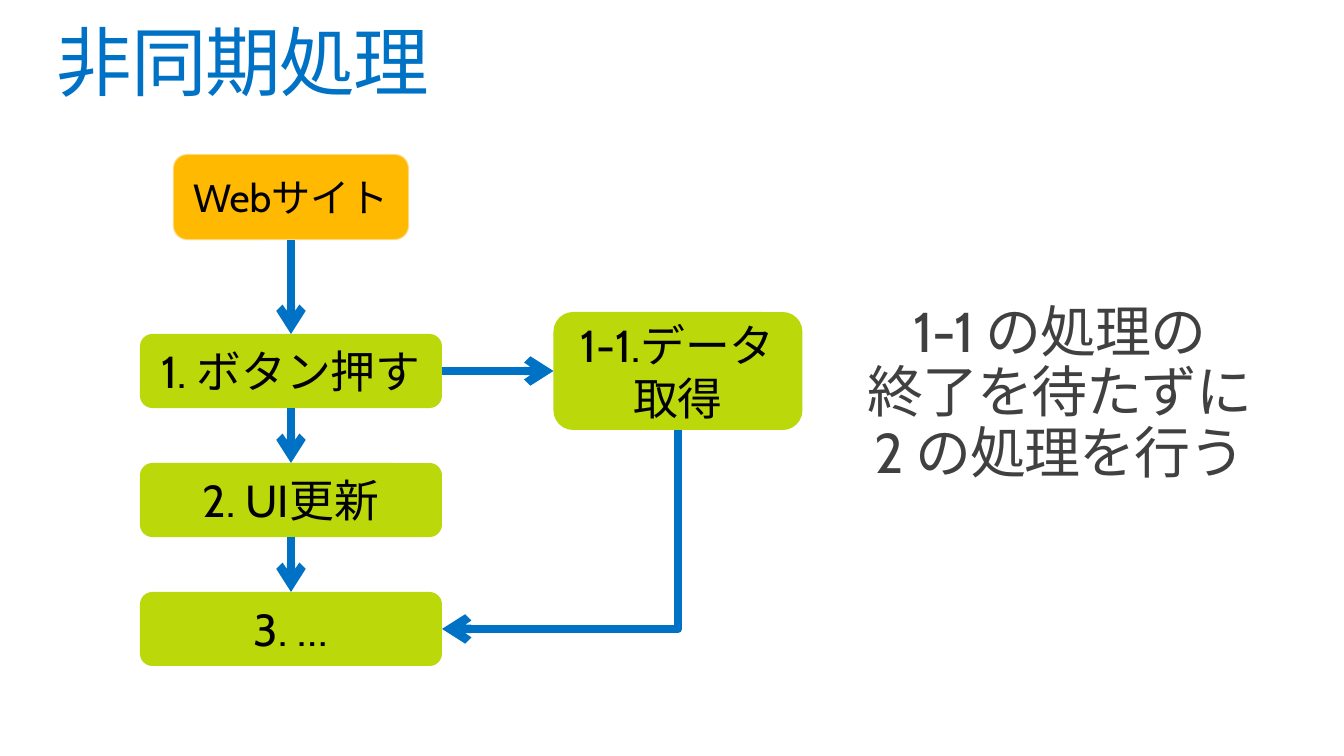
from pptx import Presentation, util as u
from pptx.dml.color import RGBColor
from pptx.enum import dml, lang, shapes, text
from pptx.oxml.ns import qn
from lxml import etree

PX = 914400 / 100.8
SLIDE = (1344, 756)
THEME = {
    "font": "Cabin",
    "blue": "0072C6", "amber": "FFB900", "green": "BAD80A",
    "edge": "F9F9F9", "black": "000000", "grey": "404040",
    "title": 54, "note": 40, "step": 32, "site": 28,
    "arrow": 6, "outline": 1.35, "inset": 5,
}

TITLE = ("非同期処理", (57, 25, 1229, 83))
NOTE = ("1-1 の処理の\v終了を待たずに\v2 の処理を行う", (815, 304, 490, 279))
SITE = "Webサイト"
STEPS = ["1. ボタン押す", "2. UI更新", "3. …"]
FETCH = "1-1.データ取得"

AXIS, STEP_TOP, STEP_PITCH = 291, 334, 129
STEP_SIZE, SITE_SIZE, FETCH_SIZE = (302, 74), (236, 86), (249, 118)
SITE_MIDDLE, FETCH_AXIS = 197, 678
TOP, LEFT, BOTTOM, RIGHT = range(4)


def emu(px):
    return u.Emu(round(px * PX))


def apply(target, values):
    for name, value in values.items():
        setattr(target, name, value)


def write(part, words, size, colour, align, anchor, inset=0, line=None, tracking=None):
    frame = part.text_frame
    apply(frame, {
        "text": words, "word_wrap": True, "auto_size": text.MSO_AUTO_SIZE.NONE,
        "vertical_anchor": anchor,
        **{f"margin_{side}": emu(inset) for side in ("left", "top", "right", "bottom")},
    })
    paragraph = frame.paragraphs[0]
    apply(paragraph, {"alignment": align, "line_spacing": line})
    for run in paragraph.runs:
        apply(run.font, {"name": THEME["font"], "size": u.Pt(THEME[size]),
                         "language_id": lang.MSO_LANGUAGE_ID.JAPANESE})
        run.font.color.rgb = RGBColor.from_string(THEME[colour])
        if tracking:
            run.font._element.set("spc", str(tracking))


def add_box(slide, words, centre, size, fill, type_size):
    (x, y), (w, h) = centre, size
    box = slide.shapes.add_shape(shapes.MSO_SHAPE.ROUNDED_RECTANGLE,
                                 *map(emu, (x - w / 2, y - h / 2, w, h)))
    box.shadow.inherit = False
    box.fill.solid()
    box.fill.fore_color.rgb = RGBColor.from_string(THEME[fill])
    box.line.fill.background()
    write(box, words, type_size, "black", text.PP_ALIGN.CENTER,
          text.MSO_ANCHOR.MIDDLE, THEME["inset"])
    return box


def add_arrow(slide, start, start_side, end, end_side):
    arrow = slide.shapes.add_connector(shapes.MSO_CONNECTOR.STRAIGHT, 0, 0, 0, 0)
    arrow.begin_connect(start, start_side)
    arrow.end_connect(end, end_side)
    arrow.line.color.rgb = RGBColor.from_string(THEME["blue"])
    arrow.line.width = u.Pt(THEME["arrow"])
    etree.SubElement(arrow.line._get_or_add_ln(), qn("a:tailEnd"), type="arrow")
    etree.SubElement(arrow._element.spPr, qn("a:effectLst"))
    return arrow


def bend_down_left(arrow):
    right, top, left, bottom = arrow.begin_x, arrow.begin_y, arrow.end_x, arrow.end_y
    across, down = right - left, bottom - top
    properties = arrow._element.spPr
    properties.find(qn("a:prstGeom")).set("prst", "bentConnector2")
    frame = properties.find(qn("a:xfrm"))
    frame.attrib.clear()
    frame.set("rot", str(90 * 60000))
    apply(arrow, {"left": u.Emu((left + right - down) // 2),
                  "top": u.Emu((top + bottom - across) // 2),
                  "width": u.Emu(down), "height": u.Emu(across)})


def main():
    deck = Presentation()
    apply(deck, dict(zip(("slide_width", "slide_height"), map(emu, SLIDE))))
    slide = deck.slides.add_slide(deck.slide_layouts[5])

    words, place = TITLE
    title = slide.shapes.title
    apply(title, dict(zip(("left", "top", "width", "height"), map(emu, place))))
    write(title, words, "title", "blue", text.PP_ALIGN.LEFT,
          text.MSO_ANCHOR.TOP, line=0.9, tracking=-100)

    site = add_box(slide, SITE, (AXIS, SITE_MIDDLE), SITE_SIZE, "amber", "site")
    site.line.color.rgb = RGBColor.from_string(THEME["edge"])
    apply(site.line, {"width": u.Pt(THEME["outline"]), "dash_style": dml.MSO_LINE.SOLID})
    edge = site.line._get_or_add_ln().find(".//" + qn("a:srgbClr"))
    etree.SubElement(edge, qn("a:alpha"), val="50000")

    first_middle = STEP_TOP + STEP_SIZE[1] / 2
    steps = [add_box(slide, step, (AXIS, first_middle + row * STEP_PITCH),
                     STEP_SIZE, "green", "step") for row, step in enumerate(STEPS)]
    fetch = add_box(slide, FETCH, (FETCH_AXIS, first_middle), FETCH_SIZE, "green", "step")

    flow = [site, *steps]
    for upper, lower in zip(flow, flow[1:]):
        add_arrow(slide, upper, BOTTOM, lower, TOP)
    add_arrow(slide, steps[0], RIGHT, fetch, LEFT)
    bend_down_left(add_arrow(slide, fetch, BOTTOM, steps[-1], RIGHT))

    words, place = NOTE
    note = slide.shapes.add_textbox(*map(emu, place))
    write(note, words, "note", "grey", text.PP_ALIGN.CENTER,
          text.MSO_ANCHOR.TOP, line=0.9, tracking=-70)

    deck.save("out.pptx")


if __name__ == "__main__":
    main()
